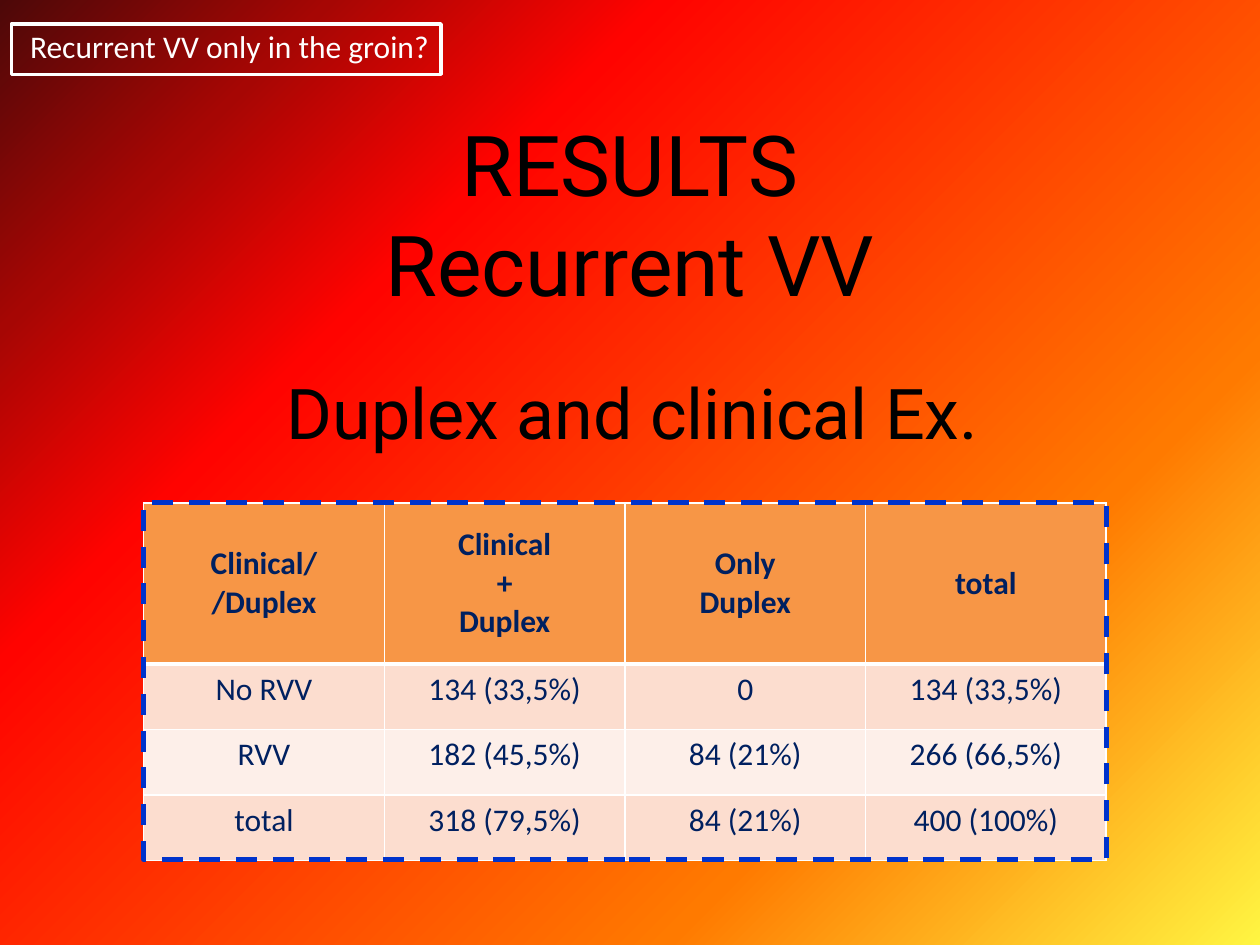
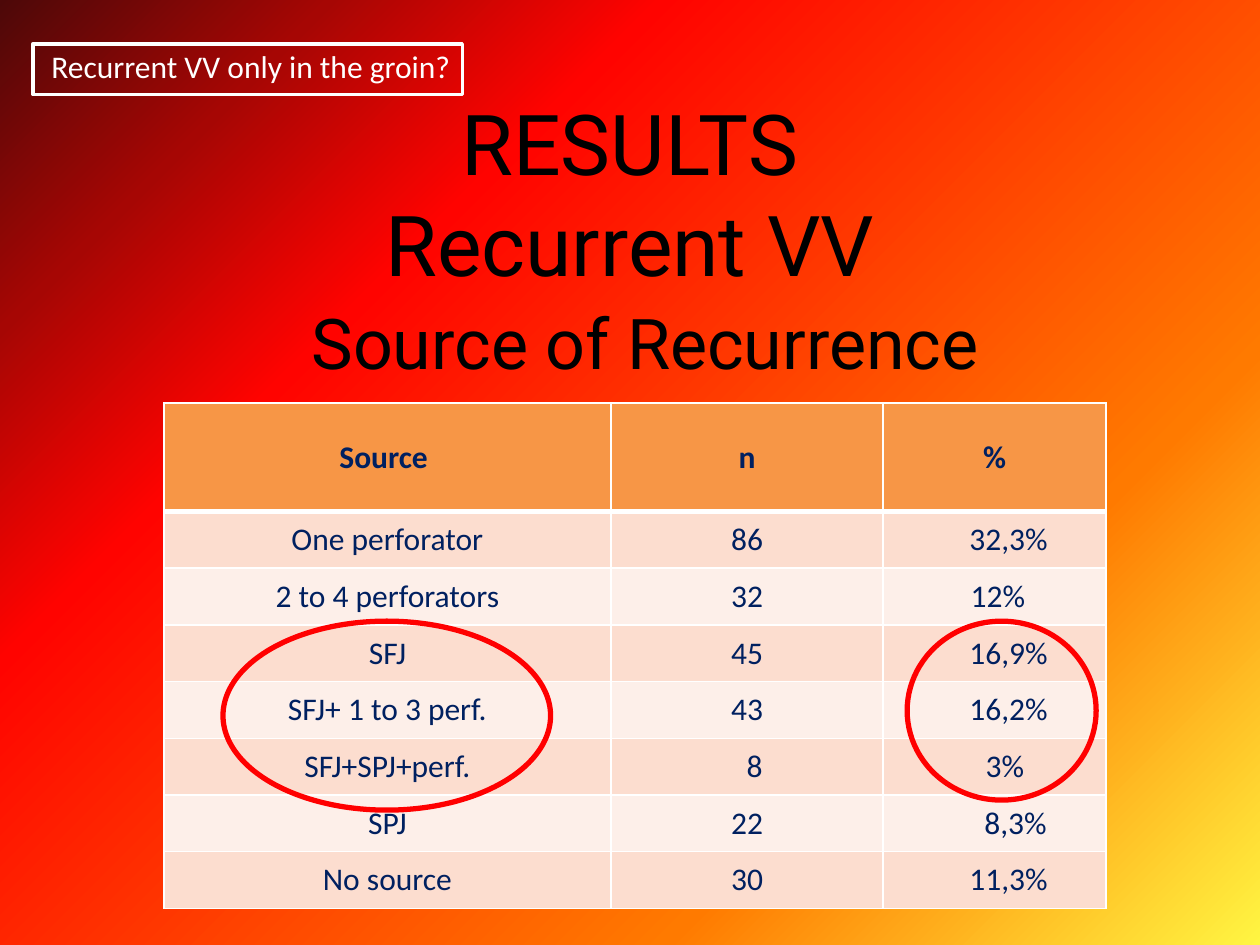
from dataclasses import dataclass

from lxml.etree import SubElement
from pptx import Presentation
from pptx.dml.color import RGBColor
from pptx.enum.dml import MSO_LINE
from pptx.enum.shapes import MSO_SHAPE as Geo
from pptx.enum.text import MSO_ANCHOR as Anchor, MSO_AUTO_SIZE as Fit, PP_ALIGN as Align
from pptx.oxml.ns import qn
from pptx.util import Inches, Pt

# Slide size and its grid of 100 columns by 75 rows
WIDTH, HEIGHT = Inches(10), Inches(7.5)
COLS, ROWS = 100, 75

# Colours
WHITE = RGBColor(0xFF, 0xFF, 0xFF)
BLACK = RGBColor(0, 0, 0)
NAVY = RGBColor(0x00, 0x20, 0x60)
BLUE = RGBColor(0x00, 0x33, 0xCC)
RED = RGBColor(0xFF, 0, 0)
ORANGE = RGBColor(0xF7, 0x96, 0x46)
BANDS = RGBColor(0xFC, 0xDD, 0xCF), RGBColor(0xFD, 0xEF, 0xE9)
STOPS = {
    0: RGBColor(0xFF, 0xF5, 0x42),
    27: RGBColor(0xFF, 0x7A, 0x00),
    70: RGBColor(0xFF, 0x03, 0x00),
    85: RGBColor(0xA6, 0x06, 0x04),
    100: RGBColor(0x4D, 0x08, 0x08),
}

# Text formats
TITLE = dict(name="Roboto", size=Pt(48))
SUB = dict(name="Roboto", size=Pt(40))
TAG = dict(name="Calibri", size=Pt(18))
HEAD = dict(name="Calibri", size=Pt(18), bold=True)
BODY = dict(name="Calibri", size=Pt(18), bold=False)


def col(n: float) -> int:
    return round(WIDTH * n / COLS)


def row(n: float) -> int:
    return round(HEIGHT * n / ROWS)


@dataclass
class Box:
    """A place on the grid, in columns and rows."""
    x: float
    y: float
    w: float
    h: float

    def place(self) -> tuple:
        return col(self.x), row(self.y), col(self.w), row(self.h)


@dataclass
class Ring:
    """An outline drawn over the slide."""
    geo: Geo
    box: Box
    hue: RGBColor
    width: float
    dash: bool = False


@dataclass
class Grid:
    """A table: its corner, column widths, row heights and cells."""
    x: float
    y: float
    wide: list
    head: float
    tall: float
    cells: list
    mid: Anchor
    shift: dict  # (row, column) -> extra left margin in columns


@dataclass
class Page:
    tag: tuple
    top: float
    sub: str
    spot: Box
    grid: Grid
    rings: list


# Shared drawing
def write(frame, text: str, style: dict, hue: RGBColor, align: Align) -> None:
    frame.text = text
    for para in frame.paragraphs:
        para.alignment = align
        para.font.color.rgb = hue
        for key, value in style.items():
            setattr(para.font, key, value)


def label(shapes, text: str, box: Box, style: dict, hue: RGBColor = BLACK,
          align: Align = Align.CENTER, wrap: bool = True) -> None:
    frame = shapes.add_textbox(*box.place()).text_frame
    write(frame, text, style, hue, align)
    frame.word_wrap = wrap
    frame.auto_size = Fit.SHAPE_TO_FIT_TEXT


def outline(shapes, ring: Ring) -> None:
    shape = shapes.add_shape(ring.geo, *ring.box.place())
    shape.shadow.inherit = False
    shape.fill.background()
    shape.line.color.rgb = ring.hue
    shape.line.width = Pt(ring.width)
    if ring.dash:
        shape.line.dash_style = MSO_LINE.DASH


def paint(slide) -> None:
    fill = slide.background.fill
    fill.gradient()
    fill.gradient_angle = 135
    stops = slide.element.find(".//" + qn("a:gsLst"))
    for old in list(stops):
        stops.remove(old)
    for pos, hue in STOPS.items():
        stop = SubElement(stops, qn("a:gs"), pos=str(pos * 1000))
        SubElement(stop, qn("a:srgbClr"), val=str(hue))


def edge(cell, sides: dict) -> None:
    props = cell._tc.get_or_add_tcPr()
    for i, (side, width) in enumerate(sides.items()):
        line = SubElement(props, qn("a:ln" + side), w=str(Pt(width)))
        fill = SubElement(line, qn("a:solidFill"))
        SubElement(fill, qn("a:srgbClr"), val=str(WHITE))
        props.insert(i, line)


def chart(shapes, grid: Grid) -> None:
    count = len(grid.cells)
    box = Box(grid.x, grid.y, sum(grid.wide), grid.head + grid.tall * (count - 1))
    table = shapes.add_table(count, len(grid.wide), *box.place()).table
    table.horz_banding = False
    for c, wide in enumerate(grid.wide):
        table.columns[c].width = col(wide)
    for r, line in enumerate(grid.cells):
        top = r == 0
        table.rows[r].height = row(grid.head if top else grid.tall)
        for c, text in enumerate(line):
            cell = table.cell(r, c)
            write(cell.text_frame, text, HEAD if top else BODY, NAVY, Align.CENTER)
            cell.vertical_anchor = Anchor.MIDDLE if top else grid.mid
            cell.margin_left = col(1 + grid.shift.get((r, c), 0))
            cell.fill.solid()
            cell.fill.fore_color.rgb = ORANGE if top else BANDS[(r - 1) % 2]
            edge(cell, dict(L=1, R=1, T=3 if r == 1 else 1, B=3 if top else 1))


def draw(deck, page: Page) -> None:
    slide = deck.slides.add_slide(deck.slide_layouts[6])
    paint(slide)
    shapes = slide.shapes
    label(shapes, "RESULTS\nRecurrent VV", Box(0, page.top, 100, 17.2), TITLE)
    label(shapes, page.sub, page.spot, SUB)
    # Framed tag
    x, y = page.tag
    group = shapes.add_group_shape().shapes
    outline(group, Ring(Geo.RECTANGLE, Box(x, y, 34.1, 4), WHITE, 2))
    label(group, "Recurrent VV only in the groin?", Box(x + 0.5, y - 0.25, 34.1, 4),
          TAG, WHITE, Align.LEFT, False)
    # Table and marks
    chart(shapes, page.grid)
    for ring in page.rings:
        outline(shapes, ring)


# Content
DUPLEX = Grid(11.4, 39.9, [19.1] * 4, 12.8, 5.2, [
    ["Clinical/\n/Duplex", "Clinical\n+\nDuplex", "Only\nDuplex", "total"],
    ["No RVV", "134 (33,5%)", "0", "134 (33,5%)"],
    ["RVV", "182 (45,5%)", "84 (21%)", "266 (66,5%)"],
    ["total", "318 (79,5%)", "84 (21%)", "400 (100%)"],
], Anchor.TOP, {})

SOURCE = Grid(13, 32, [35.5, 21.6, 17.7], 8.6, 4.5, [
    ["Source", "n", "%"],
    ["One perforator", "86", "32,3%"],
    ["2 to 4 perforators", "32", "12%"],
    ["SFJ", "45", "16,9%"],
    ["SFJ+ 1 to 3 perf.", "43", "16,2%"],
    ["SFJ+SPJ+perf.", "8", "3%"],
    ["SPJ", "22", "8,3%"],
    ["No source", "30", "11,3%"],
], Anchor.MIDDLE, {
    (0, 0): -0.6, (5, 1): 1.2, (2, 2): 0.5, (5, 2): 1.6, (6, 2): 3.3,
    **{(r, 2): 2.2 for r in (1, 3, 4, 7)},
})

PAGES = [
    Page((0.9, 1.9), 8.4, "Duplex and clinical Ex.", Box(0.2, 28.8, 100, 7.7), DUPLEX,
         [Ring(Geo.RECTANGLE, Box(11.4, 39.9, 76.4, 28.3), BLUE, 3, True)]),
    Page((2.6, 3.5), 6.8, "Source of Recurrence", Box(1.2, 23.3, 100, 7.7), SOURCE,
         [Ring(Geo.OVAL, Box(17.7, 49.3, 26, 15), RED, 3),
          Ring(Geo.OVAL, Box(72, 49.3, 15, 14.2), RED, 3)]),
]


def main() -> None:
    deck = Presentation()
    deck.slide_width, deck.slide_height = WIDTH, HEIGHT
    for page in PAGES:
        draw(deck, page)
    deck.save("out.pptx")


if __name__ == "__main__":
    main()
